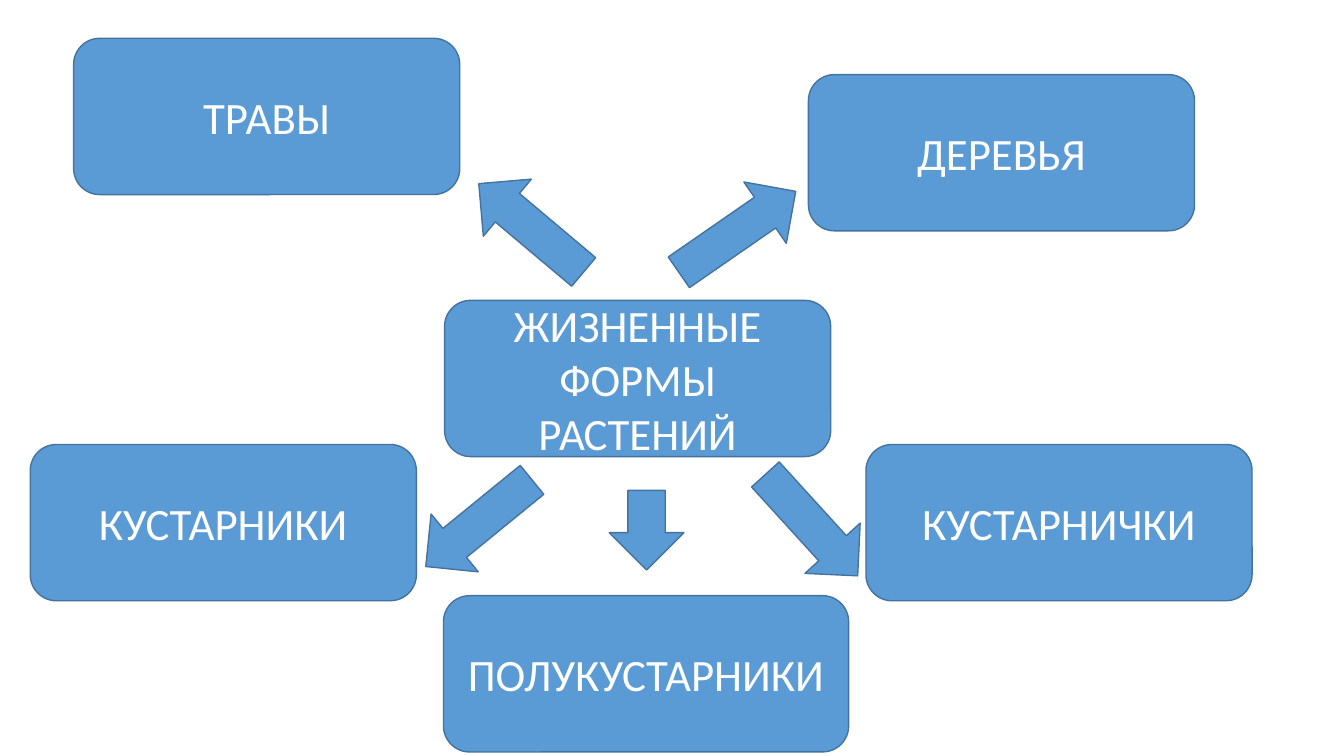
from dataclasses import dataclass

from pptx import Presentation
from pptx import util as u
from pptx.dml.color import RGBColor
from pptx.enum import shapes, text

SLIDE_WIDTH = u.Inches(13.33)
SLIDE_HEIGHT = u.Inches(7.5)
FILL, OUTLINE, WHITE = "5B9BD5", "43739E", "FFFFFF"
FONT_FORMAT = {"name": "Calibri", "size": u.Pt(32)}
FRAME_FORMAT = {"word_wrap": True, "vertical_anchor": text.MSO_ANCHOR.MIDDLE}
BOX_HEIGHT = 20.67
ARROW_THICKNESS = 9.87


# Horizontal values are percent of slide width, vertical ones of slide height
@dataclass(frozen=True)
class Box:
    label: str
    left: float
    top: float
    width: float = 28.73


@dataclass(frozen=True)
class Arrow:
    center_x: float
    center_y: float
    rotation: float
    length: float = 10.2


BOXES = [
    Box("ЖИЗНЕННЫЕ ФОРМЫ РАСТЕНИЙ", 33.08, 39.73),
    Box("КУСТАРНИЧКИ", 64.43, 58.8),
    Box("КУСТАРНИКИ", 2.25, 58.8),
    Box("ДЕРЕВЬЯ", 60.15, 9.87),
    Box("ТРАВЫ", 5.48, 5.07),
    Box("ПОЛУКУСТАРНИКИ", 33, 78.8, width=30.15),
]
ARROWS = [
    Arrow(54.86, 30.67, 325.3, length=10.58),
    Arrow(39.53, 30.13, 220.1),
    Arrow(35.63, 69.2, 140.8),
    Arrow(60.38, 69.47, 47.7),
    Arrow(48.11, 70.13, 90, length=5.93),
]


def color(value: str) -> RGBColor:
    return RGBColor.from_string(value)


def apply_format(target, values: dict) -> None:
    for name, value in values.items():
        setattr(target, name, value)


def add_blue_shape(slide, kind, left: float, top: float, width: float, height: float):
    shape = slide.shapes.add_shape(
        kind,
        round(SLIDE_WIDTH * left / 100),
        round(SLIDE_HEIGHT * top / 100),
        round(SLIDE_WIDTH * width / 100),
        round(SLIDE_HEIGHT * height / 100),
    )
    shape.shadow.inherit = False
    shape.fill.solid()
    shape.fill.fore_color.rgb = color(FILL)
    shape.line.color.rgb = color(OUTLINE)
    shape.line.width = u.Pt(1)
    return shape


def draw_box(slide, box: Box) -> None:
    shape = add_blue_shape(slide, shapes.MSO_SHAPE.ROUNDED_RECTANGLE,
                           box.left, box.top, box.width, BOX_HEIGHT)
    apply_format(shape.text_frame, FRAME_FORMAT)
    paragraph = shape.text_frame.paragraphs[0]
    paragraph.alignment = text.PP_ALIGN.CENTER
    run = paragraph.add_run()
    run.text = box.label
    apply_format(run.font, FONT_FORMAT)
    run.font.color.rgb = color(WHITE)


def draw_arrow(slide, arrow: Arrow) -> None:
    shape = add_blue_shape(slide, shapes.MSO_SHAPE.RIGHT_ARROW,
                           arrow.center_x - arrow.length / 2,
                           arrow.center_y - ARROW_THICKNESS / 2,
                           arrow.length, ARROW_THICKNESS)
    shape.rotation = arrow.rotation


def main() -> None:
    presentation = Presentation()
    presentation.slide_width = SLIDE_WIDTH
    presentation.slide_height = SLIDE_HEIGHT
    slide = presentation.slides.add_slide(presentation.slide_layouts[6])

    # Central topic and the life forms around it
    for box in BOXES:
        draw_box(slide, box)

    # Arrows from the topic to each form
    for arrow in ARROWS:
        draw_arrow(slide, arrow)

    presentation.save("out.pptx")


if __name__ == "__main__":
    main()
